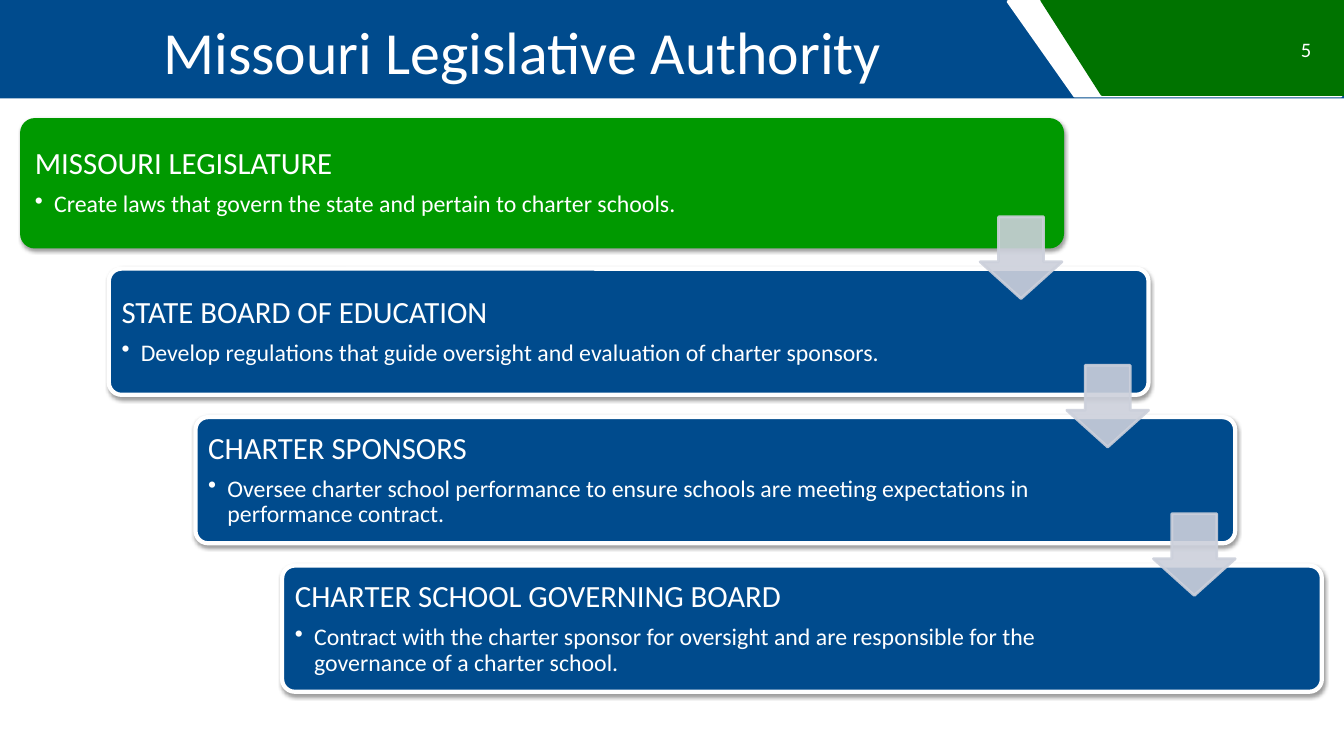
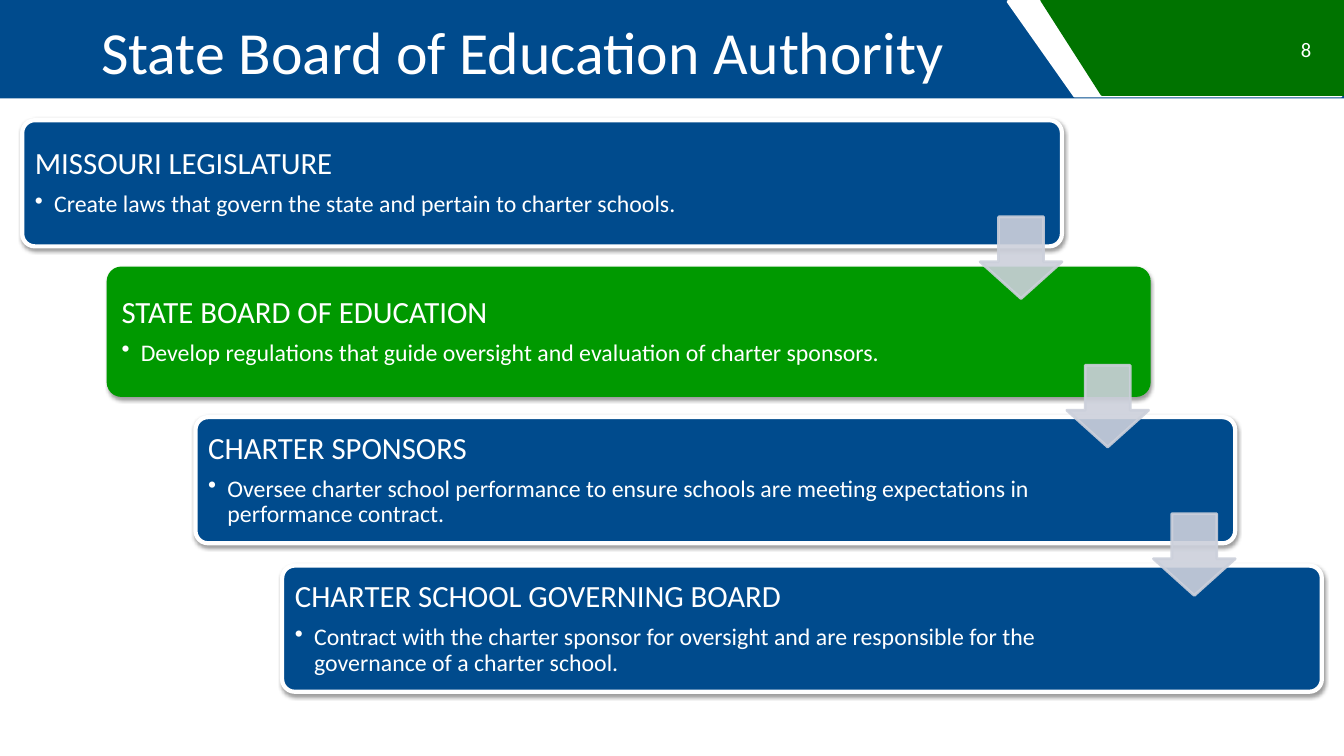
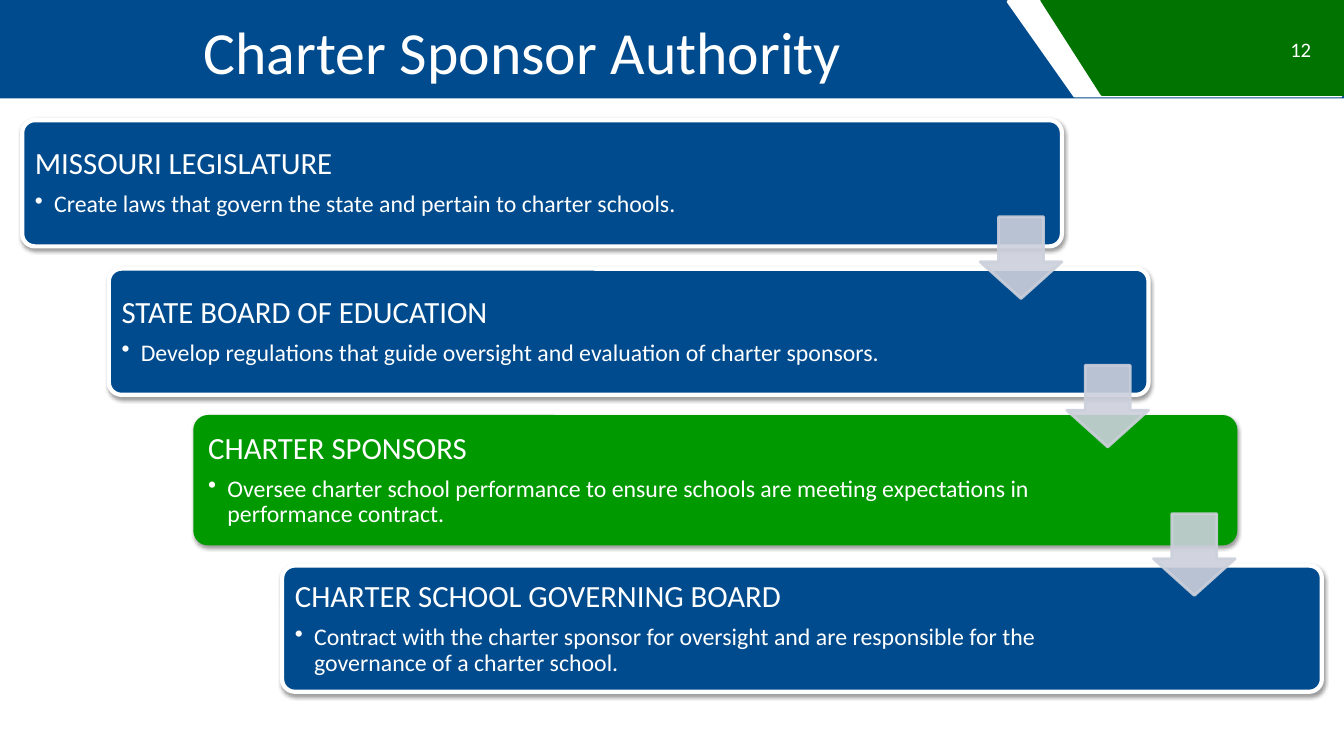
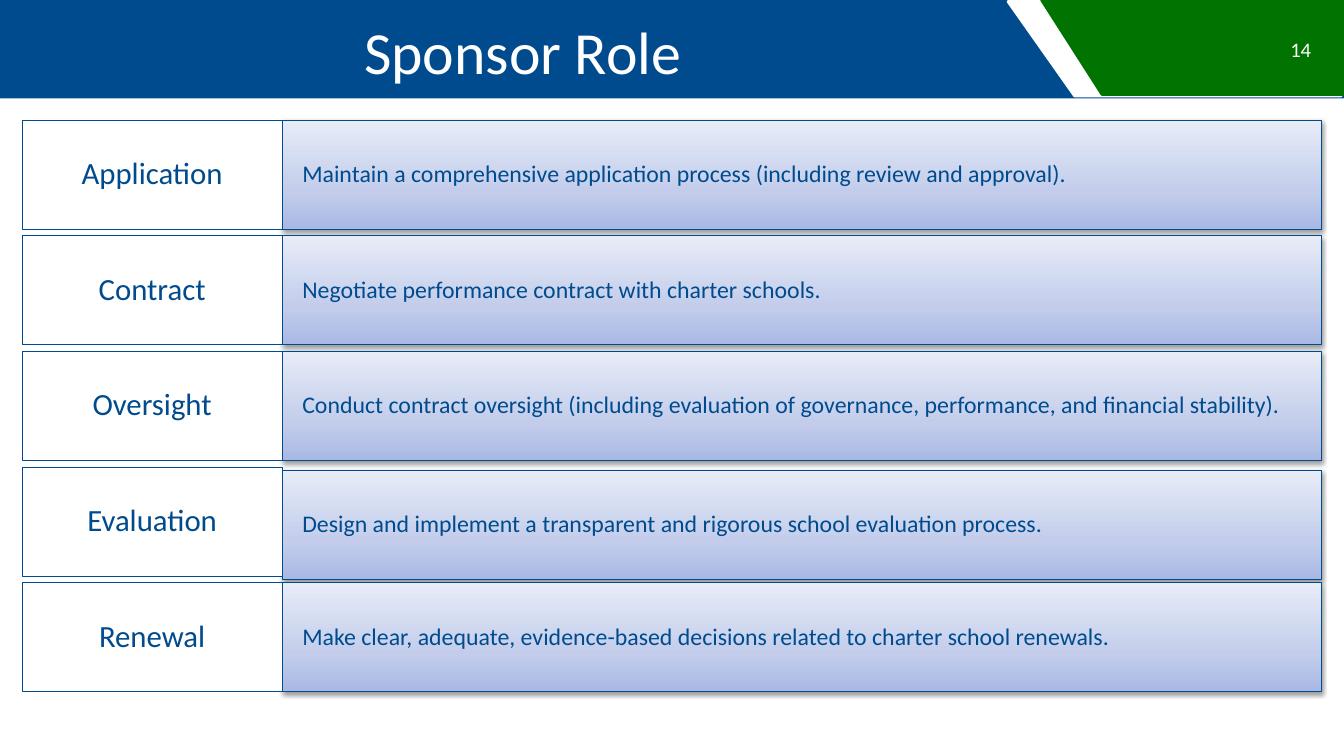
from lxml import etree
from pptx import Presentation
from pptx.dml.color import RGBColor
from pptx.enum.shapes import MSO_SHAPE
from pptx.enum.text import MSO_ANCHOR, MSO_AUTO_SIZE, PP_ALIGN
from pptx.oxml import parse_xml
from pptx.oxml.ns import nsdecls, qn
from pptx.util import Inches, Pt

RECT = MSO_SHAPE.RECTANGLE
ROUNDED = MSO_SHAPE.ROUNDED_RECTANGLE
DOWN_ARROW = MSO_SHAPE.DOWN_ARROW
SLANTED = MSO_SHAPE.FLOWCHART_MANUAL_INPUT
LEFT, CENTER, RIGHT = PP_ALIGN.LEFT, PP_ALIGN.CENTER, PP_ALIGN.RIGHT
MIDDLE = MSO_ANCHOR.MIDDLE
FIXED_SIZE = MSO_AUTO_SIZE.NONE

TITLE_ONLY = 5
FONT = "Calibri"
WHITE, BLUE, GREEN, DARK_GREEN, GREY = "FFFFFF", "004B8D", "009900", "007300", "CCD0DB"
TINT_STOPS = [(0, "A9B8E4"), (35, "C3CDEB"), (100, "E8ECF8")]
HEADING, BODY = 22, 17

# Body grid in percent of the slide's width and height
GRID_LEFT, GRID_TOP, GRID_WIDTH, GRID_HEIGHT = 1.65, 15.9, 96.7, 75.6
COLUMNS = 15

AUTHORITIES = [
    ("MISSOURI LEGISLATURE",
     "Create laws that govern the state and pertain to charter schools."),
    ("STATE BOARD OF EDUCATION",
     "Develop regulations that guide oversight and evaluation of charter sponsors."),
    ("CHARTER SPONSORS",
     "Oversee charter school performance to ensure schools are meeting expectations in "
     "performance contract."),
    ("CHARTER SCHOOL GOVERNING BOARD",
     "Contract with the charter sponsor for oversight and are responsible for the "
     "governance of a charter school."),
]
# Title, page number, index of the highlighted authority
AUTHORITY_SLIDES = [
    ("Missouri Legislative Authority", 5, 0),
    ("State Board of Education Authority", 8, 1),
    ("Charter Sponsor Authority", 12, 2),
]
# Duty, description, downward shift of the description in percent
SPONSOR_DUTIES = [
    ("Application",
     "Maintain a comprehensive application process (including review and approval).", 0),
    ("Contract", "Negotiate performance contract with charter schools.", 0),
    ("Oversight",
     "Conduct contract oversight (including evaluation of governance, performance, "
     "and financial stability).", 0),
    ("Evaluation",
     "Design and implement a transparent and rigorous school evaluation process.", 0.4),
    ("Renewal",
     "Make clear, adequate, evidence-based decisions related to charter school renewals.", 0),
]


def color(hex_code):
    return RGBColor.from_string(hex_code)


def apply(target, values):
    for name, value in values.items():
        setattr(target, name, value)


def columns(count):
    """Width of a number of grid columns, in percent."""
    return GRID_WIDTH * count / COLUMNS


def grid_rows(count, gap):
    """Tops and common height of equal rows that fill the grid."""
    height = (GRID_HEIGHT - gap * (count - 1)) / count
    return [GRID_TOP + i * (height + gap) for i in range(count)], height


class Deck:
    """Holds the shared style and the current slide; boxes are in percent."""

    def __init__(self):
        self.prs = Presentation()
        apply(self.prs, {"slide_width": Inches(13.33), "slide_height": Inches(7.5)})
        self.layout = self.prs.slide_layouts[TITLE_ONLY]
        for holder in list(self.layout.placeholders):
            if holder.placeholder_format.idx != 0:
                holder._element.getparent().remove(holder._element)
        self.slide = None

    def box(self, left, top, width, height):
        across, down = self.prs.slide_width / 100, self.prs.slide_height / 100
        return [int(n) for n in (left * across, top * down, width * across, height * down)]

    def open_slide(self, title, number):
        self.slide = self.prs.slides.add_slide(self.layout)
        if len(self.layout.shapes) == 1:
            self.draw_header_on_layout()
        self.title(title)
        self.page_number(number)

    def draw_header_on_layout(self):
        bands = [
            self.shape(RECT, (0, 0, 100, 13), BLUE),
            self.slanted_band((75, 0.2, 24.8, 12.5), WHITE),
            self.slanted_band((77.5, 0, 22.5, 12.5), DARK_GREEN),
        ]
        layout_title = self.layout.placeholders[0]._element
        for band in bands:
            layout_title.addprevious(band._element)

    def slanted_band(self, area, fill):
        """Shape turned a quarter so that it covers the area."""
        band = self.shape(SLANTED, area, fill, fill, 2)
        left, top, width, height = self.box(*area)
        apply(band, {
            "left": left + (width - height) // 2, "top": top + (height - width) // 2,
            "width": height, "height": width, "rotation": 270,
        })
        return band

    def shape(self, preset, area, fill, line=None, line_width=1):
        item = self.slide.shapes.add_shape(preset, *self.box(*area))
        item.shadow.inherit = False
        item.fill.solid()
        item.fill.fore_color.rgb = color(fill)
        if line:
            item.line.color.rgb = color(line)
            item.line.width = Pt(line_width)
        else:
            item.line.fill.background()
        return item

    def cast_shadow(self, item):
        effects = item._element.spPr.find(qn("a:effectLst"))
        effects.append(parse_xml(
            f'<a:outerShdw {nsdecls("a")} blurRad="{Pt(3.1)}" dist="{Pt(1.6)}" '
            'dir="5400000" rotWithShape="0"><a:srgbClr val="000000">'
            '<a:alpha val="38000"/></a:srgbClr></a:outerShdw>'))

    def tint(self, item):
        """Fill with a gradient that grows lighter upwards."""
        stops = "".join(
            f'<a:gs pos="{pos * 1000}"><a:srgbClr val="{tone}"/></a:gs>'
            for pos, tone in TINT_STOPS)
        props = item._element.spPr
        props.replace(props.find(qn("a:solidFill")), parse_xml(
            f'<a:gradFill {nsdecls("a")} rotWithShape="1"><a:gsLst>{stops}</a:gsLst>'
            '<a:lin ang="16200000" scaled="0"/></a:gradFill>'))

    def frame(self, item, side=0.1, right=None):
        apply(item.text_frame, {
            "word_wrap": True, "auto_size": FIXED_SIZE, "vertical_anchor": MIDDLE,
            "margin_left": Inches(side),
            "margin_right": Inches(side if right is None else right),
            "margin_top": Inches(0.05), "margin_bottom": Inches(0.05),
        })
        return item.text_frame

    def add_text(self, paragraph, text, size, tone=WHITE, **paragraph_format):
        apply(paragraph, paragraph_format)
        run = paragraph.add_run()
        run.text = text
        apply(run.font, {"name": FONT, "size": Pt(size)})
        run.font.color.rgb = color(tone)

    def title(self, text):
        holder = self.slide.shapes.title
        left, top, width, height = self.box(3.3, 0.9, 70, 11.5)
        apply(holder, {"left": left, "top": top, "width": width, "height": height})
        frame = self.frame(holder, 0.26, 0.1)
        self.add_text(frame.paragraphs[0], text, 42.7, alignment=CENTER)

    def page_number(self, number):
        corner = self.slide.shapes.add_textbox(*self.box(93.3, 3.9, 5, 5.3))
        self.add_text(self.frame(corner).paragraphs[0], str(number), 14.7, alignment=RIGHT)

    def authority_card(self, area, heading, duty, highlighted):
        fill, line = (GREEN, GREEN) if highlighted else (BLUE, WHITE)
        card = self.shape(ROUNDED, area, fill, line, 3)
        card.adjustments[0] = 0.1
        self.cast_shadow(card)
        frame = self.frame(card, 0.09, 1.76)
        self.add_text(frame.paragraphs[0], heading, HEADING, alignment=LEFT,
                      line_spacing=0.9, space_after=Pt(7.7))
        bullet = frame.add_paragraph()
        props = bullet._p.get_or_add_pPr()
        props.set("marL", str(Inches(0.19)))
        props.set("indent", str(-Inches(0.19)))
        etree.SubElement(props, qn("a:buChar")).set("char", "•")
        self.add_text(bullet, duty, BODY, level=1, alignment=LEFT,
                      line_spacing=0.9, space_after=Pt(2.5))

    def step_arrow(self, card_right, card_bottom):
        width, height = 6.08, 10.8
        arrow = self.shape(DOWN_ARROW, (card_right - width, card_bottom - 3.9, width, height),
                           GREY, GREY, 2)
        arrow.adjustments[0], arrow.adjustments[1] = 0.55, 0.45
        for tone in arrow._element.spPr.iter(qn("a:srgbClr")):
            etree.SubElement(tone, qn("a:alpha")).set("val", "90000")

    def duty_row(self, top, height, duty, description, shift):
        label_width = columns(3)
        panel = self.shape(
            RECT, (GRID_LEFT + label_width, top + shift, columns(12), height),
            WHITE, BLUE, 0.75)
        self.tint(panel)
        self.cast_shadow(panel)
        label = self.shape(RECT, (GRID_LEFT, top, label_width, height), WHITE, BLUE, 0.75)
        for item, side, text, size, align in (
                (panel, 0.2, description, BODY, LEFT), (label, 0.14, duty, HEADING, CENTER)):
            self.add_text(self.frame(item, side).paragraphs[0], text, size, BLUE,
                          alignment=align, line_spacing=0.9)


def authority_slide(deck, title, number, highlighted):
    deck.open_slide(title, number)
    tops, height = grid_rows(len(AUTHORITIES), 2.95)
    width = columns(12)
    lefts = [GRID_LEFT + columns(i) for i in range(len(AUTHORITIES))]
    for i, (heading, duty) in enumerate(AUTHORITIES):
        deck.authority_card((lefts[i], tops[i], width, height), heading, duty,
                            i == highlighted)
    for left, top in list(zip(lefts, tops))[:-1]:
        deck.step_arrow(left + width, top + height)


def sponsor_slide(deck):
    deck.open_slide("Sponsor Role", 14)
    tops, height = grid_rows(len(SPONSOR_DUTIES), 0.9)
    for top, duty in zip(tops, SPONSOR_DUTIES):
        deck.duty_row(top, height, *duty)


def main():
    deck = Deck()
    for content in AUTHORITY_SLIDES:
        authority_slide(deck, *content)
    sponsor_slide(deck)
    deck.prs.save("out.pptx")


if __name__ == "__main__":
    main()
